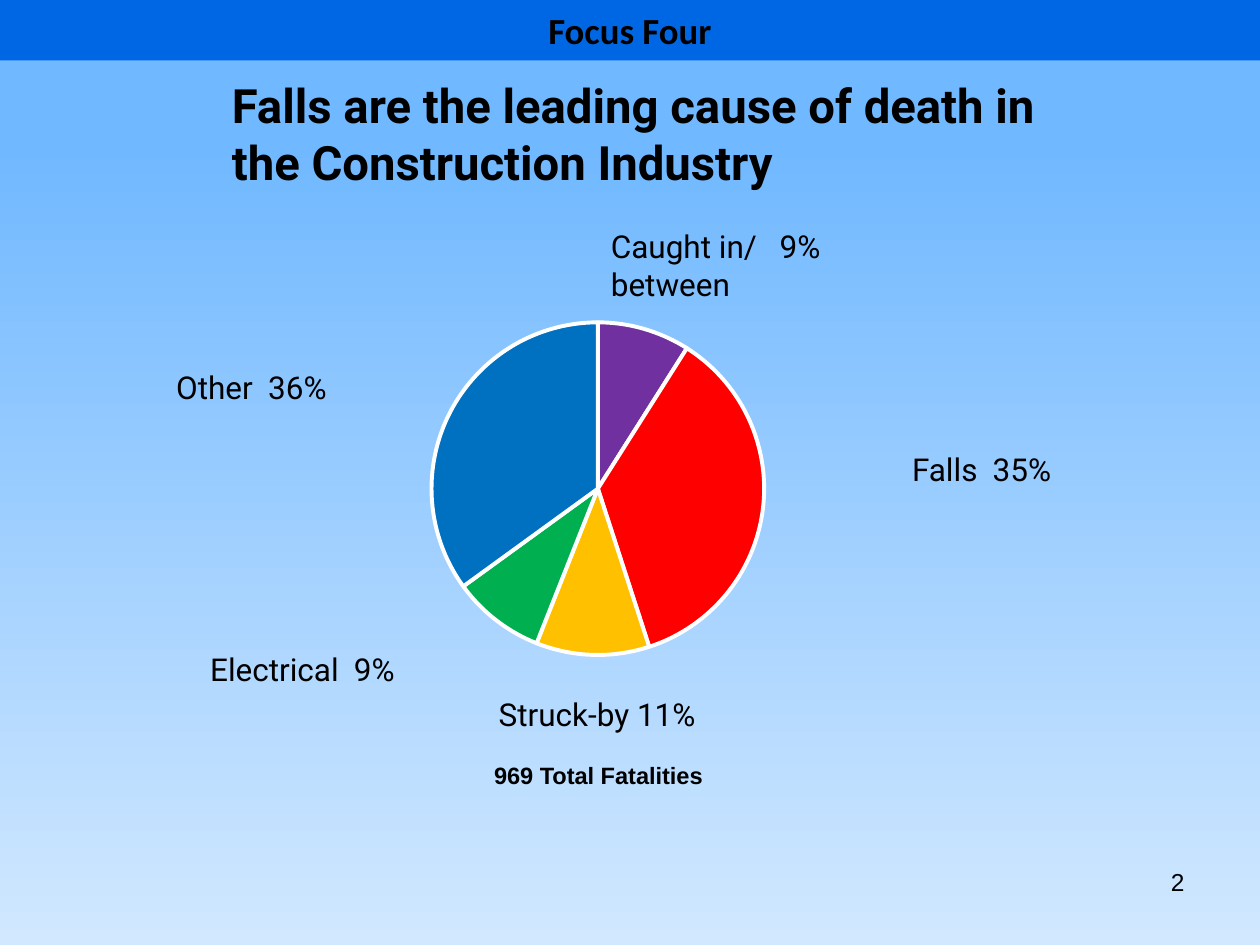
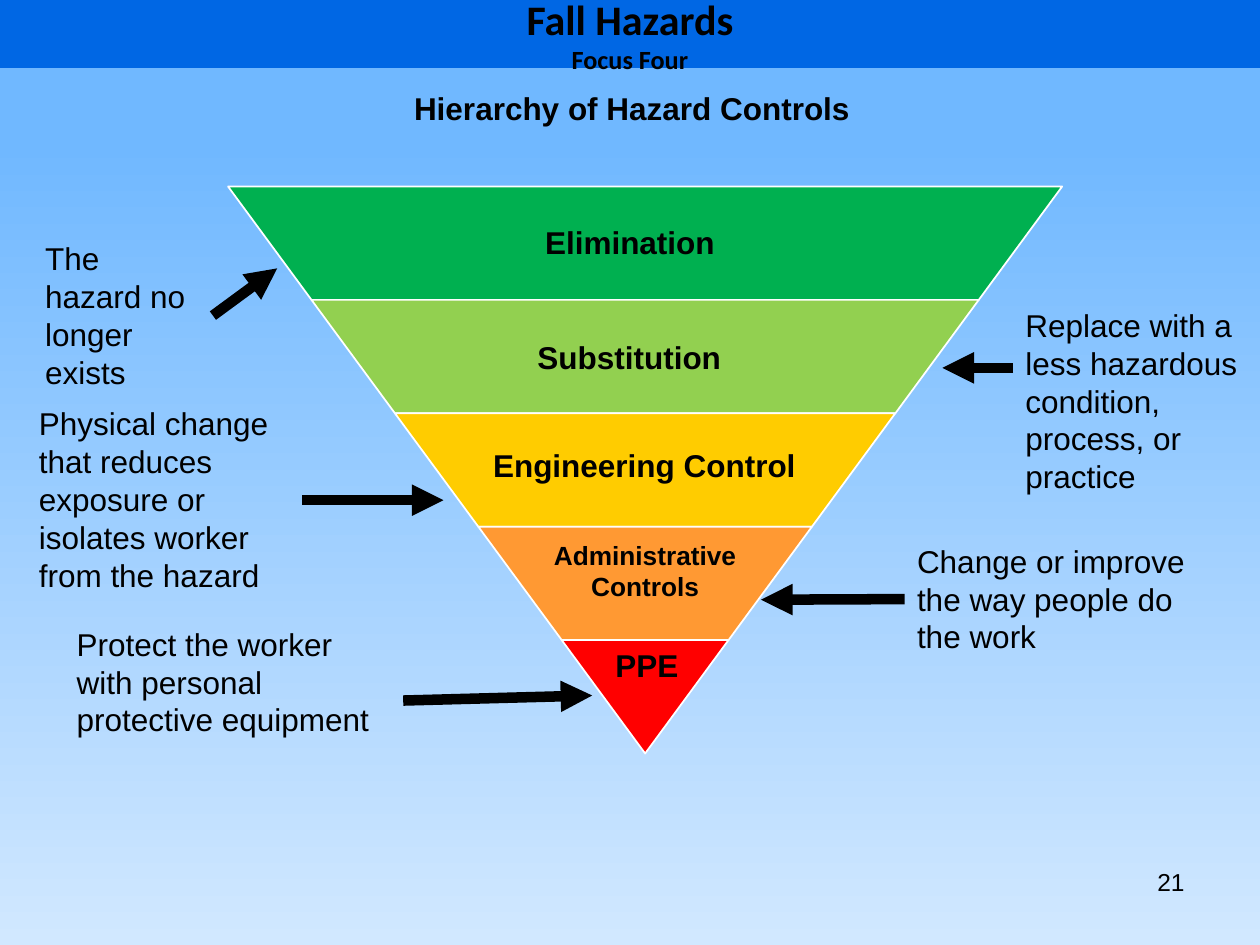
from dataclasses import dataclass, replace
from typing import Any

from lxml.etree import SubElement
from pptx import Presentation
from pptx.chart.data import CategoryChartData
from pptx.dml.color import RGBColor
from pptx.enum.chart import XL_CHART_TYPE
from pptx.enum.shapes import MSO_CONNECTOR, MSO_SHAPE
from pptx.enum.text import MSO_ANCHOR, PP_ALIGN
from pptx.oxml import parse_xml
from pptx.oxml.ns import nsdecls, qn
from pptx.util import Inches, Pt

BLACK, WHITE, BAND = "000000", "FFFFFF", "0067E4"
SKY = ((0.15, "70B8FF"), (1.0, "D1E8FF"))
TIGHT = {"margin_left": Inches(0.07), "margin_right": Inches(0.07),
         "margin_top": Inches(0.04), "margin_bottom": Inches(0.04),
         "vertical_anchor": MSO_ANCHOR.MIDDLE}


@dataclass(frozen=True)
class Style:
    """How a piece of text is set."""
    size: float = 18
    font: str = "Arial"
    bold: bool = False
    align: Any = PP_ALIGN.LEFT
    wrap: bool = True


@dataclass(frozen=True)
class Note:
    """A text box; tab is the place of its tab stop in inches."""
    text: str
    left: float
    top: float
    width: float
    height: float
    style: Style = Style()
    tab: float = 0


@dataclass(frozen=True)
class Level:
    """One level of the hierarchy: its colour and its label."""
    colour: str
    label: Note


@dataclass(frozen=True)
class Arrow:
    """An arrow from an explanation; site is the joined side, if any."""
    note: Note
    start: tuple[float, float]
    end: tuple[float, float]
    site: int | None = None


BODY = Style()
ROBOTO = Style(font="Roboto")
STRONG = Style(bold=True, align=PP_ALIGN.CENTER, wrap=False)
BAND_STYLE = Style(font="Calibri", bold=True, align=PP_ALIGN.CENTER)

HEADLINE = Note("Falls are the leading cause of death in the Construction Industry",
                1.77, 0.71, 6.69, 0.69, Style(27, "Roboto", True))
SLICES = ((9, "7030A0"), (36, "FF0000"), (11, "FFC000"), (9, "00B050"), (35, "0070C0"))
CAUSES = (
    Note("Struck-by 11%", 3.74, 5.47, 2, 0.4, replace(ROBOTO, align=PP_ALIGN.CENTER)),
    Note("Electrical\t9%", 1.57, 5.11, 1.76, 0.56, ROBOTO, 1.14),
    Note("Other\t36%", 1.3, 2.87, 1.58, 0.4, ROBOTO, 0.73),
    Note("Caught in/\t9% between", 4.75, 1.75, 2.06, 0.71, ROBOTO, 1.34),
    Note("Falls\t35%", 7.14, 3.52, 1.5, 0.4, ROBOTO, 0.64),
    Note("969 Total Fatalities", 2.25, 5.99, 5, 0.33,
         Style(13.5, bold=True, align=PP_ALIGN.CENTER)),
)

SUBTITLE = Note("Hierarchy of Hazard Controls", 3.17, 0.66, 3.69, 0.4, STRONG)
LEVELS = (
    Level("00B050", Note("Elimination", 4.22, 1.72, 1.56, 0.4, STRONG)),
    Level("92D050", Note("Substitution", 4.16, 2.63, 1.67, 0.4, STRONG)),
    Level("FFCC00", Note("Engineering Control", 3.8, 3.49, 2.63, 0.4, STRONG)),
    Level("FF9933", Note("Administrative\nControls", 4.29, 4.23, 1.66, 0.61,
                         replace(STRONG, size=15))),
    Level("FF0000", Note("PPE", 4.78, 5.08, 0.71, 0.4, STRONG)),
)
ARROWS = (
    Arrow(Note("Replace with a less hazardous condition, process, or practice",
               8.04, 2.38, 1.94, 1.62), (8.04, 2.92), (7.48, 2.92)),
    Arrow(Note("The hazard no longer exists", 0.26, 1.85, 1.43, 1.31),
          (1.69, 2.51), (2.2, 2.13), 3),
    Arrow(Note("Physical change that reduces exposure or isolates worker from the hazard",
               0.21, 3.16, 2.19, 1.62), (2.4, 3.97), (3.52, 3.97), 3),
    Arrow(Note("Change or improve the way people do the work",
               7.18, 4.25, 2.33, 1.01), (7.18, 4.76), (6.04, 4.76), 1),
    Arrow(Note("Protect the worker with personal protective equipment",
               0.51, 4.91, 2.61, 1.01), (3.2, 5.56), (4.7, 5.52)),
)


def colour_of(code: str) -> RGBColor:
    """Turn a hex string into a colour."""
    return RGBColor.from_string(code)


def assign(target: Any, values: dict[str, Any]) -> None:
    """Set each named attribute of the target."""
    for name, value in values.items():
        setattr(target, name, value)


def inches(*lengths: float) -> list[int]:
    """Convert several lengths to inches."""
    return [Inches(length) for length in lengths]


def paint(shape: Any, fill: str, line: str | None = None) -> None:
    """Give a shape a flat fill and an optional thin outline."""
    shape.shadow.inherit = False
    shape.fill.solid()
    shape.fill.fore_color.rgb = colour_of(fill)
    if line:
        shape.line.color.rgb = colour_of(line)
        shape.line.width = Pt(1)
    else:
        shape.line.fill.background()


def write(para: Any, text: str, style: Style) -> None:
    """Write one styled run into a paragraph."""
    para.alignment = style.align
    span = para.add_run()
    span.text = text
    assign(span.font, {"size": Pt(style.size), "name": style.font, "bold": style.bold})
    span.font.color.rgb = colour_of(BLACK)


def add_note(page: Any, note: Note, frame_format: dict[str, Any] | None = None) -> Any:
    """Add a text box with one paragraph for each line of its text."""
    box = page.shapes.add_textbox(*inches(note.left, note.top, note.width, note.height))
    frame = box.text_frame
    assign(frame, {"word_wrap": note.style.wrap, **(frame_format or {})})
    for index, line in enumerate(note.text.split("\n")):
        para = frame.add_paragraph() if index else frame.paragraphs[0]
        write(para, line, note.style)
        if note.tab:
            stops = SubElement(para._p.get_or_add_pPr(), qn("a:tabLst"))
            SubElement(stops, qn("a:tab"), pos=str(Inches(note.tab)), algn="l")
    return box


def add_page(deck: Any, number: int, height: float, titles: dict[str, float]) -> Any:
    """Add a page with its sky, title band and page number."""
    page = deck.slides.add_slide(deck.slide_layouts[6])
    sky = page.background.fill
    sky.gradient()
    sky.gradient_angle = 270
    for stop, (position, code) in zip(sky.gradient_stops, SKY):
        stop.position = position
        stop.color.rgb = colour_of(code)
    band = page.shapes.add_shape(MSO_SHAPE.RECTANGLE, *inches(0, 0, 10, height))
    paint(band, BAND)
    assign(band.text_frame, {"word_wrap": True, **TIGHT})
    for index, (title, size) in enumerate(titles.items()):
        para = band.text_frame.add_paragraph() if index else band.text_frame.paragraphs[0]
        write(para, title, replace(BAND_STYLE, size=size))
    add_note(page, Note(str(number), 7.17, 6.83, 2.33, 0.52, Style(14, align=PP_ALIGN.RIGHT)))
    return page


def add_pie(page: Any) -> None:
    """Add the pie of fatalities by cause."""
    data = CategoryChartData()
    data.categories = [str(index + 1) for index in range(len(SLICES))]
    data.add_series("Series 1", [value for value, _ in SLICES])
    chart = page.shapes.add_chart(
        XL_CHART_TYPE.PIE, *inches(2.11, 2.53, 5.27, 2.87), data).chart
    assign(chart, {"has_legend": False, "has_title": False})
    assign(chart.font, {"size": Pt(10), "name": "Arial"})
    chart.font.color.rgb = colour_of(BLACK)
    plot = chart.plots[0]
    plot.vary_by_categories = True
    for index, (_, code) in enumerate(SLICES):
        look = plot.series[0].points[index].format
        look.fill.solid()
        look.fill.fore_color.rgb = colour_of(code)
        look.line.color.rgb = colour_of(WHITE)
        look.line.width = Pt(2.25)
    area = chart._chartSpace.chart.plotArea
    for old in area.findall(qn("c:layout")):
        area.remove(old)
    settings = {"layoutTarget": "inner", "xMode": "edge", "yMode": "edge",
                "x": 0.02, "y": 0.01, "w": 0.96, "h": 0.92}
    items = "".join(f'<c:{name} val="{value}"/>' for name, value in settings.items())
    area.insert(0, parse_xml(
        f'<c:layout {nsdecls("c")}><c:manualLayout>{items}</c:manualLayout></c:layout>'))


def add_hierarchy(page: Any) -> None:
    """Stack the levels into a triangle that points down."""
    top, middle, width, height = 1.48, 5.12, 6.62, 0.9
    step = width / len(LEVELS)
    group = page.shapes.add_group_shape()
    for index, level in enumerate(LEVELS):
        span = width - index * step
        block = group.shapes.add_shape(
            MSO_SHAPE.TRAPEZOID,
            *inches(middle - span / 2, top + index * height, span, height))
        block.rotation = 180
        block.adjustments[0] = step / 2 / height
        paint(block, level.colour, WHITE)


def add_arrow(page: Any, arrow: Arrow) -> None:
    """Add an explanation and the arrow that leads from it."""
    box = add_note(page, arrow.note)
    line = page.shapes.add_connector(
        MSO_CONNECTOR.STRAIGHT, *inches(*arrow.start, *arrow.end))
    if arrow.site is not None:
        line.begin_connect(box, arrow.site)
    line.line.color.rgb = colour_of(BLACK)
    line.line.width = Pt(6)
    SubElement(line.line._get_or_add_ln(), qn("a:tailEnd"), type="triangle")
    SubElement(line._element.spPr, qn("a:effectLst"))


def build_causes(deck: Any) -> None:
    """Build the page on causes of death."""
    page = add_page(deck, 2, 0.48, {"Focus Four": 21})
    add_note(page, HEADLINE, TIGHT)
    add_pie(page)
    for cause in CAUSES:
        add_note(page, cause)


def build_controls(deck: Any) -> None:
    """Build the page on hazard controls."""
    page = add_page(deck, 21, 0.54, {"Fall Hazards": 24, "Focus Four": 15})
    add_hierarchy(page)
    add_note(page, SUBTITLE)
    for arrow in ARROWS:
        add_arrow(page, arrow)
    for level in LEVELS:
        add_note(page, level.label)


def main() -> None:
    """Build the deck and save it."""
    deck = Presentation()
    assign(deck, {"slide_width": Inches(10), "slide_height": Inches(7.5)})
    build_causes(deck)
    build_controls(deck)
    deck.save("out.pptx")


if __name__ == "__main__":
    main()
